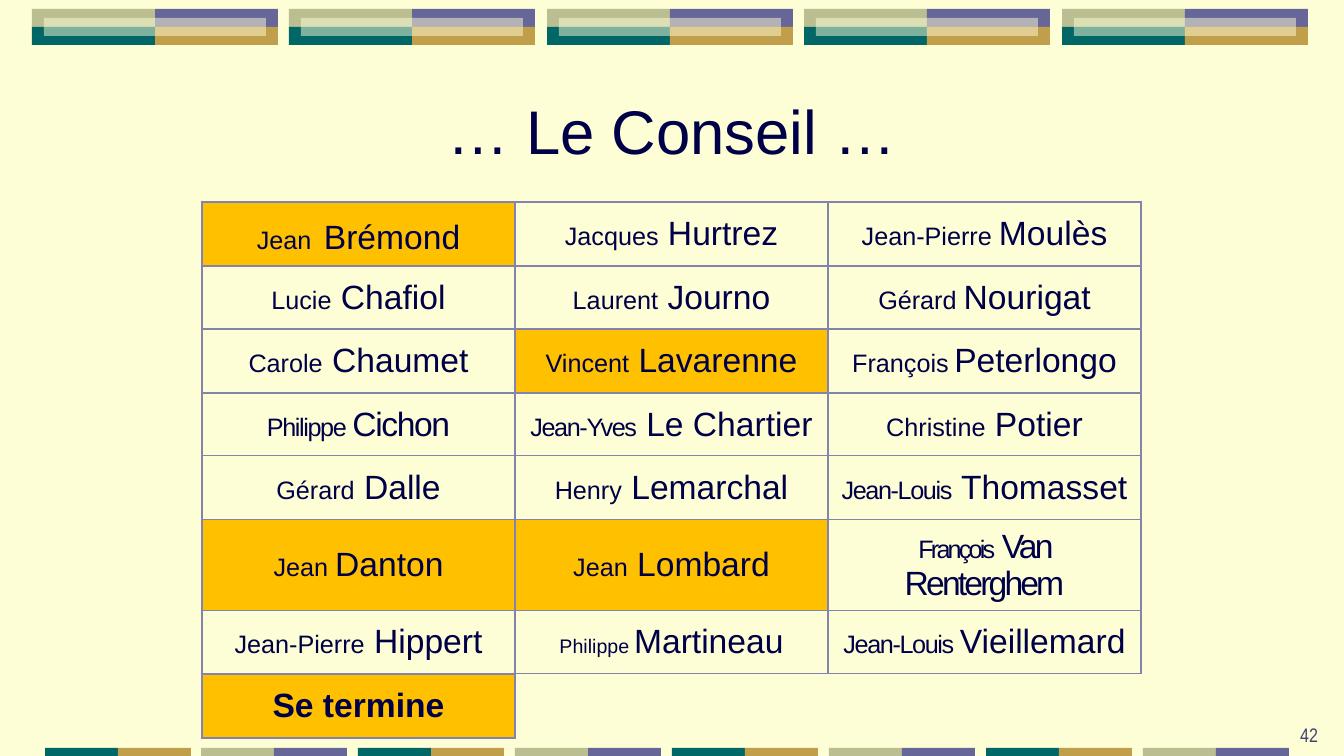
from dataclasses import dataclass
from itertools import product

from lxml.etree import SubElement
from pptx import Presentation
from pptx.dml.color import RGBColor
from pptx.enum.shapes import MSO_SHAPE
from pptx.enum.text import MSO_ANCHOR, PP_ALIGN
from pptx.oxml.ns import qn
from pptx.util import Emu, Pt

PX = 914400 / 100.8
CREAM, NAVY, SLATE, GOLD = "FEFED6", "000048", "8383AD", "FFC000"
SAGE, VIOLET, TEAL, OCHRE = "BABE90", "666699", "006666", "C09E4A"
THIN, THICK = 1, 2.25
HEIGHTS = [64, 63, 64, 63, 64, 85, 63]
WIDTH = 313


@dataclass
class Run:
    text: str
    size: float = 24
    track: int = 0
    bold: bool = False
    font: str = "Arial"
    color: str = NAVY


@dataclass
class Person:
    first: str
    last: str
    ends: bool = False
    size: int = 18
    gap: int = 0  # size of a separate space between the names
    tight: tuple[int, int] = (0, 0)

    def runs(self) -> list[Run]:
        space = [Run(" ", self.gap)] if self.gap else []
        return [Run(self.first, self.size, self.tight[0]), *space,
                Run(self.last, track=self.tight[1])]


BOARD = [
    [Person("Jean", "Brémond", True, gap=32),
     Person("Jacques", " Hurtrez"),
     Person("Jean-Pierre ", "Moulès")],
    [Person("Lucie", " Chafiol"),
     Person("Laurent", " Journo"),
     Person("Gérard ", "Nourigat")],
    [Person("Carole", " Chaumet"),
     Person("Vincent", " Lavarenne", True),
     Person("François", "Peterlongo", gap=14)],
    [Person("Philippe ", "Cichon", tight=(-1, -1)),
     Person("Jean-Yves", " Le Chartier", tight=(-1, 0)),
     Person("Christine", " Potier")],
    [Person("Gérard", " Dalle"),
     Person("Henry", " Lemarchal"),
     Person("Jean-Louis", " Thomasset", tight=(-1, 0))],
    [Person("Jean ", "Danton", True),
     Person("Jean", " Lombard", True),
     Person("François", " Van Renterghem", tight=(-2, -2))],
    [Person("Jean-Pierre", " Hippert"),
     Person("Philippe", "Martineau", size=14, gap=12),
     Person("Jean-Louis ", "Vieillemard", tight=(-1, 0))],
]


def px(n: int) -> Emu:
    return Emu(round(n * PX))


def paint(fill, color: str) -> None:
    fill.solid()
    fill.fore_color.rgb = RGBColor.from_string(color)


def tile(x: int, y: int, w: int, h: int, color: str, alpha: int = 100) -> None:
    box = slide.shapes.add_shape(MSO_SHAPE.RECTANGLE, px(x), px(y), px(w), px(h))
    box.shadow.inherit = False
    box.line.fill.background()
    paint(box.fill, color)
    if alpha < 100:
        tint = box.fill._xPr.find(".//" + qn("a:srgbClr"))
        SubElement(tint, qn("a:alpha"), val=str(alpha * 1000))


def write(frame, runs: list[Run], align: PP_ALIGN = PP_ALIGN.CENTER) -> None:
    para = frame.paragraphs[0]
    para.alignment = align
    for item in runs:
        run = para.add_run()
        run.text = item.text
        font = run.font
        font.size, font.name, font.bold = Pt(item.size), item.font, item.bold
        font.color.rgb = RGBColor.from_string(item.color)
        if item.track:
            font._element.set("spc", str(item.track * 100))


def label(x: int, y: int, w: int, h: int, run: Run,
          anchor: MSO_ANCHOR, align: PP_ALIGN) -> None:
    frame = slide.shapes.add_textbox(px(x), px(y), px(w), px(h)).text_frame
    frame.word_wrap = True
    frame.vertical_anchor = anchor
    write(frame, [run], align)


def edge(cell, **widths: float) -> None:
    """Draw the cell's borders; L, R, T and B are widths in points."""
    props = cell._tc.get_or_add_tcPr()
    for side in "LRTB":
        line = SubElement(props, qn("a:ln" + side),
                          w=str(Pt(widths.get(side, THIN))))
        fill = SubElement(line, qn("a:solidFill"))
        SubElement(fill, qn("a:srgbClr"), val=SLATE)


def grid(x: int, y: int, heights: list[int], cols: int):
    frame = slide.shapes.add_table(len(heights), cols, px(x), px(y),
                                   px(cols * WIDTH), px(sum(heights)))
    table = frame.table
    table.first_row = table.horz_banding = False
    for row, height in zip(table.rows, heights):
        row.height = px(height)
    for col in table.columns:
        col.width = px(WIDTH)
    return table


def fill_cell(cell, runs: list[Run], ends: bool, **widths: float) -> None:
    cell.vertical_anchor = MSO_ANCHOR.MIDDLE
    write(cell.text_frame, runs)
    edge(cell, **widths)
    if ends:
        paint(cell.fill, GOLD)
    else:
        cell.fill.background()


deck = Presentation()
deck.slide_width, deck.slide_height = px(1344), px(756)
slide = deck.slides.add_slide(deck.slide_layouts[6])
paint(slide.background.fill, CREAM)

for i in range(5):
    left = 32 + i * 515 // 2
    for (row, col), color in zip(product(range(2), repeat=2),
                                 [SAGE, VIOLET, TEAL, OCHRE]):
        tile(left + col * 123, 9 + row * 18, 123, 18, color)
    tile(left + 12, 18, 222, 18, CREAM, 50)

for i in range(8):
    left = 45 + i * 1098 // 7
    pair = [SAGE, VIOLET] if i % 2 else [TEAL, OCHRE]
    for col, color in enumerate(pair):
        tile(left + col * 73, 748, 73, 8, color)

label(1048, 724, 280, 27, Run("42", 14, font="Arial Narrow", color="404176"),
      MSO_ANCHOR.BOTTOM, PP_ALIGN.RIGHT)
label(101, 67, 1142, 126, Run("… Le Conseil …", 44),
      MSO_ANCHOR.MIDDLE, PP_ALIGN.CENTER)

board = grid(202, 202, HEIGHTS, 3)
for r, people in enumerate(BOARD):
    for c, person in enumerate(people):
        fill_cell(board.cell(r, c), person.runs(), person.ends,
                  L=THIN if c else THICK, R=THICK if c == 2 else THIN,
                  T=THIN if r else THICK)

key = grid(202, 674, [64], 1)
fill_cell(key.cell(0, 0), [Run("Se termine", bold=True)], True, T=THICK)

deck.save("out.pptx")
